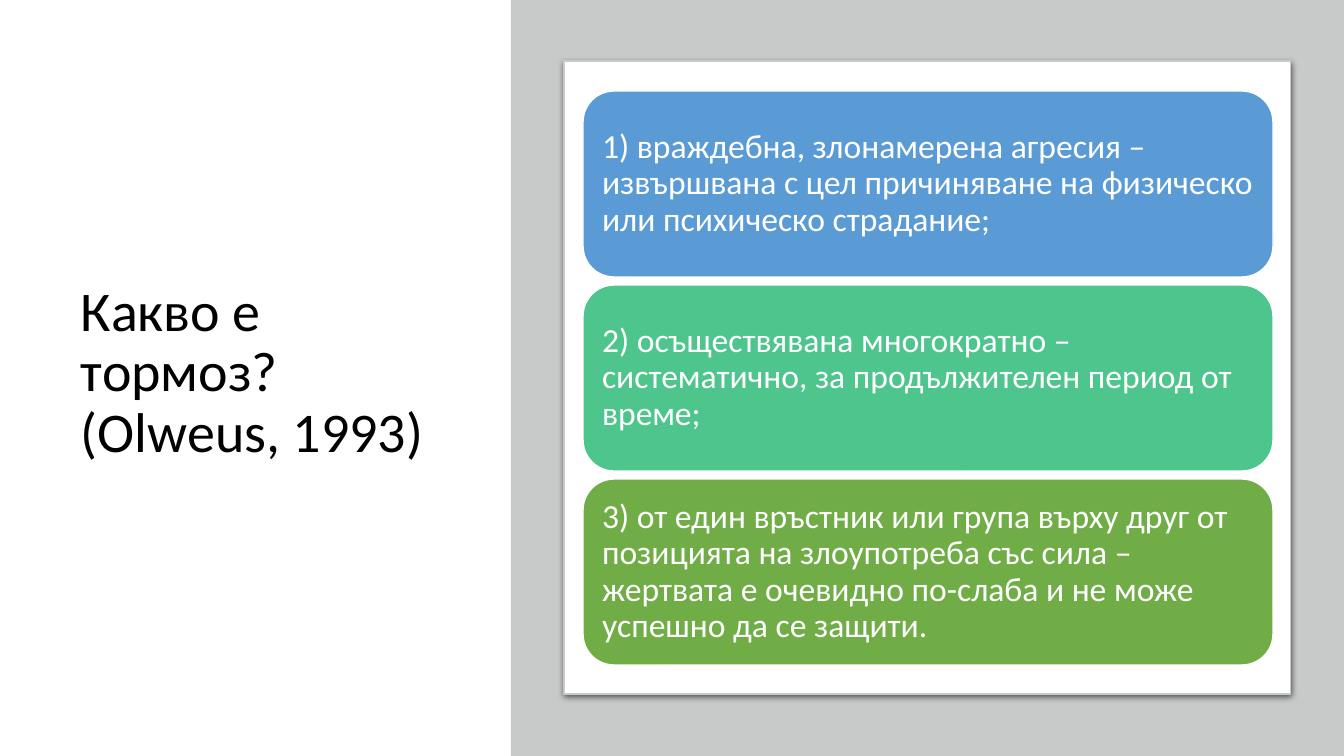
from lxml.etree import SubElement
from pptx import Presentation
from pptx.dml.color import RGBColor
from pptx.enum.shapes import MSO_SHAPE as Preset
from pptx.enum.text import MSO_ANCHOR as Anchor, PP_ALIGN as Align
from pptx.oxml.ns import qn
from pptx.util import Emu, Pt

EMU_PER_PX = 914400 / 100.8
PAGE_WIDTH, PAGE_HEIGHT = 1344, 756
FONT_NAME = "Calibri"
INSET = 10

BLACK = RGBColor(0x00, 0x00, 0x00)
WHITE = RGBColor(0xFF, 0xFF, 0xFF)
GREY = RGBColor(0xC8, 0xCA, 0xCA)
BLUE = RGBColor(0x5B, 0x9B, 0xD5)
MINT = RGBColor(0x4D, 0xC5, 0x8D)
GREEN = RGBColor(0x70, 0xAD, 0x47)

TITLE = "Какво е тормоз? (Olweus, 1993)"
CRITERIA = [
    (BLUE, "1) враждебна, злонамерена агресия – извършвана с цел "
           "причиняване на физическо или психическо страдание;"),
    (MINT, "2) осъществявана многократно – систематично, "
           "за продължителен период от време;"),
    (GREEN, "3) от един връстник или група върху друг от позицията на "
            "злоупотреба със сила – жертвата е очевидно по-слаба и не може "
            "успешно да се защити."),
]
CARD_LEFT, CARD_TOP = 583, 91
CARD_WIDTH, CARD_HEIGHT = 690, 186
CARD_PITCH = 194


def px(length):
    return Emu(round(length * EMU_PER_PX))


def write_text(shape, text, size, color):
    frame = shape.text_frame
    frame.word_wrap = True
    frame.vertical_anchor = Anchor.MIDDLE
    frame.margin_left = frame.margin_right = px(INSET)
    frame.margin_top = frame.margin_bottom = px(INSET)
    para = frame.paragraphs[0]
    para.alignment = Align.LEFT
    para.line_spacing = 0.9
    span = para.add_run()
    span.text = text
    span.font.name = FONT_NAME
    span.font.size = Pt(size)
    span.font.color.rgb = color


def add_panel(page, preset, left, top, width, height, fill, line=None, weight=1):
    panel = page.shapes.add_shape(preset, px(left), px(top), px(width), px(height))
    panel.shadow.inherit = False
    panel.fill.solid()
    panel.fill.fore_color.rgb = fill
    if line is None:
        panel.line.fill.background()
    else:
        panel.line.color.rgb = line
        panel.line.width = Pt(weight)
    return panel


def add_drop_shadow(shape):
    effects = shape._element.spPr.find(qn("a:effectLst"))
    shadow = SubElement(effects, qn("a:outerShdw"), blurRad=str(Pt(4.5)),
                        dist=str(Pt(1.5)), dir="5400000", algn="ctr",
                        rotWithShape="0")
    color = SubElement(shadow, qn("a:srgbClr"), val=str(BLACK))
    SubElement(color, qn("a:alpha"), val="63000")


def add_title(page):
    box = page.shapes.add_textbox(px(71), px(70), px(404), px(607))
    write_text(box, TITLE, 40, BLACK)


def add_criterion(page, row, fill, text):
    card = add_panel(page, Preset.ROUNDED_RECTANGLE, CARD_LEFT,
                     CARD_TOP + row * CARD_PITCH, CARD_WIDTH, CARD_HEIGHT,
                     fill, WHITE)
    write_text(card, text, 24, WHITE)


def main():
    deck = Presentation()
    deck.slide_width = px(PAGE_WIDTH)
    deck.slide_height = px(PAGE_HEIGHT)
    page = deck.slides.add_slide(deck.slide_layouts[6])

    add_title(page)
    add_panel(page, Preset.RECTANGLE, 511, 0, PAGE_WIDTH - 511, PAGE_HEIGHT, GREY)
    frame = add_panel(page, Preset.ROUNDED_RECTANGLE, 564, 61, 727, 633,
                      WHITE, GREY, 0.75)
    frame.adjustments[0] = 0
    add_drop_shadow(frame)
    for row, (fill, text) in enumerate(CRITERIA):
        add_criterion(page, row, fill, text)

    deck.save("out.pptx")


if __name__ == "__main__":
    main()
